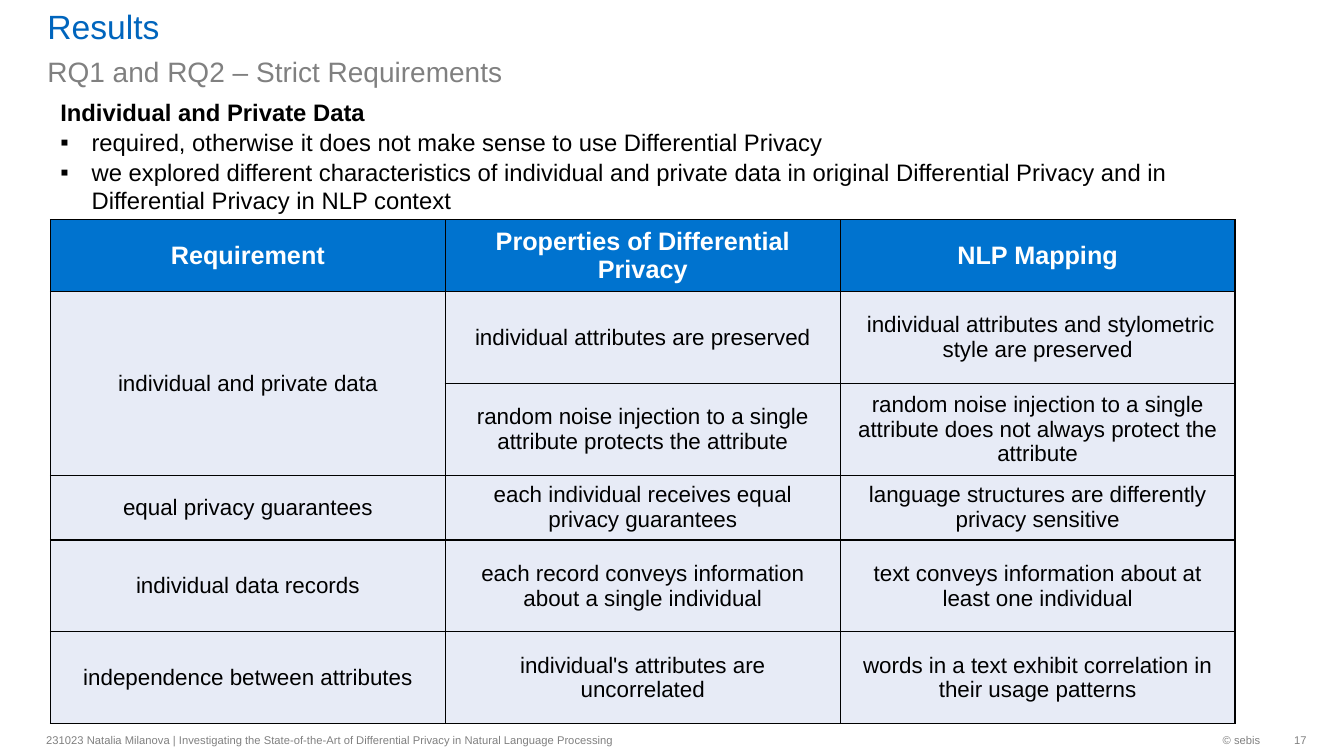
from itertools import product

from lxml.etree import SubElement
from pptx import Presentation
from pptx.dml.color import RGBColor
from pptx.enum.text import MSO_ANCHOR, PP_ALIGN
from pptx.oxml.ns import qn
from pptx.util import Emu, Inches, Pt

SLIDE_WIDTH, SLIDE_HEIGHT = Inches(13.33), Inches(7.5)
BLUE, HEADER_BLUE, PALE_BLUE = "0065BD", "0073CF", "E7EBF6"
GRAY, BLACK, WHITE = "808080", "000000", "FFFFFF"

HEADER = ["Requirement", "Properties of Differential Privacy", "NLP Mapping"]
BODY = [
    ["individual and private data", "individual attributes are preserved",
     " individual attributes and stylometric style are preserved"],
    ["", "random noise injection to a single attribute protects the attribute",
     "random noise injection to a single attribute does not always protect the attribute"],
    ["equal privacy guarantees", "each individual receives equal privacy guarantees",
     "language structures are differently privacy sensitive"],
    ["individual data records", "each record conveys information about a single individual",
     "text conveys information about at least one individual"],
    ["independence between attributes", "individual's attributes are uncorrelated",
     "words in a text exhibit correlation in their usage patterns"],
]
ROW_WEIGHTS = [0.71, 0.91, 0.91, 0.64, 0.91, 0.91]


def color(value):
    """Turn a hex string into a colour."""
    return RGBColor.from_string(value)


def share(left, top, width, height):
    """Turn percentages of the slide into a box."""
    return [Emu(round(part * side / 100)) for part, side in
            zip((left, top, width, height), (SLIDE_WIDTH, SLIDE_HEIGHT) * 2)]


def part_of(box, left, top, width, height):
    """Return a box given as fractions of another box."""
    x, y, w, h = box
    return [Emu(round(v)) for v in (x + left * w, y + top * h, width * w, height * h)]


def write(frame, text, size, fill=BLACK, bold=False, align=PP_ALIGN.LEFT,
          bullet=None, before=0, new=False):
    """Write one formatted paragraph into a text frame."""
    para = frame.add_paragraph() if new else frame.paragraphs[0]
    properties = para._p.get_or_add_pPr()
    if bullet:
        properties.set("marL", str(Inches(0.31)))
        properties.set("indent", str(-Inches(0.31)))
        SubElement(properties, qn("a:buFont"), typeface="Arial")
        SubElement(properties, qn("a:buChar"), char=bullet)
    para.alignment = align
    if before:
        para.space_before = Pt(before)
    span = para.add_run()
    span.text = text
    span.font.name = "Arial"
    span.font.size = Pt(size)
    span.font.bold = bold
    span.font.color.rgb = color(fill)


def add_text_box(page, box, anchor=MSO_ANCHOR.TOP):
    """Add an empty wrapping text box and return its frame."""
    frame = page.shapes.add_textbox(*box).text_frame
    frame.word_wrap = True
    frame.vertical_anchor = anchor
    return frame


def add_heading(page, box):
    """Place the title and the subtitle."""
    title = page.shapes.title
    title.left, title.top, title.width, title.height = part_of(box, 0, 0, 1, 0.46)
    frame = title.text_frame
    frame.margin_top = frame.margin_bottom = 0
    frame.vertical_anchor = MSO_ANCHOR.BOTTOM
    write(frame, "Results", 24, fill=BLUE)
    subtitle = add_text_box(page, part_of(box, 0, 0.5, 1, 0.5))
    write(subtitle, "RQ1 and RQ2 – Strict Requirements", 20, fill=GRAY)


def add_summary(page, box):
    """Place the bold lead line and its bullets."""
    frame = add_text_box(page, box)
    write(frame, "Individual and Private Data", 17, bold=True)
    for text in (
        "required, otherwise it does not make sense to use Differential Privacy",
        "we explored different characteristics of individual and private data in "
        "original Differential Privacy and in Differential Privacy in NLP context",
    ):
        write(frame, text, 17, bullet="▪", before=1, new=True)


def add_borders(cell):
    """Draw thin black lines around a cell."""
    properties = cell._tc.get_or_add_tcPr()
    for index, side in enumerate(("a:lnL", "a:lnR", "a:lnT", "a:lnB")):
        line = properties.makeelement(qn(side), {"w": str(Pt(1))})
        fill = SubElement(line, qn("a:solidFill"))
        SubElement(fill, qn("a:srgbClr"), val=BLACK)
        properties.insert(index, line)


def add_requirements(page, box):
    """Place the table of requirements."""
    rows = [HEADER] + BODY
    table = page.shapes.add_table(len(rows), len(HEADER), *box).table
    for row, weight in zip(table.rows, ROW_WEIGHTS):
        row.height = Emu(round(box[3] * weight / sum(ROW_WEIGHTS)))
    for r, c in product(range(len(rows)), range(len(HEADER))):
        cell = table.cell(r, c)
        is_header = r == 0
        cell.fill.solid()
        cell.fill.fore_color.rgb = color(HEADER_BLUE if is_header else PALE_BLUE)
        cell.vertical_anchor = MSO_ANCHOR.MIDDLE
        add_borders(cell)
        if rows[r][c]:
            write(cell.text_frame, rows[r][c], 18 if is_header else 16,
                  fill=WHITE if is_header else BLACK, bold=is_header,
                  align=PP_ALIGN.CENTER)
    table.cell(1, 0).merge(table.cell(2, 0))


def add_footer(page, box):
    """Place the footer texts on a grid of 35 columns."""
    for text, start, span, align in (
        ("231023 Natalia Milanova | Investigating the State-of-the-Art of "
         "Differential Privacy in Natural Language Processing", 0, 17.5, PP_ALIGN.LEFT),
        ("© sebis", 27.5, 6.5, PP_ALIGN.RIGHT),
        ("17", 34, 1, PP_ALIGN.RIGHT),
    ):
        frame = add_text_box(page, part_of(box, start / 35, 0, span / 35, 1),
                             MSO_ANCHOR.MIDDLE)
        if start + span == 35:
            frame.margin_right = 0
        write(frame, text, 8, fill=GRAY, align=align)


def main():
    """Build and save the deck."""
    deck = Presentation()
    deck.slide_width, deck.slide_height = SLIDE_WIDTH, SLIDE_HEIGHT
    page = deck.slides.add_slide(deck.slide_layouts.get_by_name("Title Only"))
    add_heading(page, share(2.78, 0.93, 86.87, 11.33))
    add_requirements(page, share(3.75, 29.07, 88.15, 66.67))
    add_summary(page, share(3.75, 12.27, 88.15, 16.8))
    add_footer(page, share(2.7, 95.8, 94.52, 4.27))
    deck.save("out.pptx")


if __name__ == "__main__":
    main()
